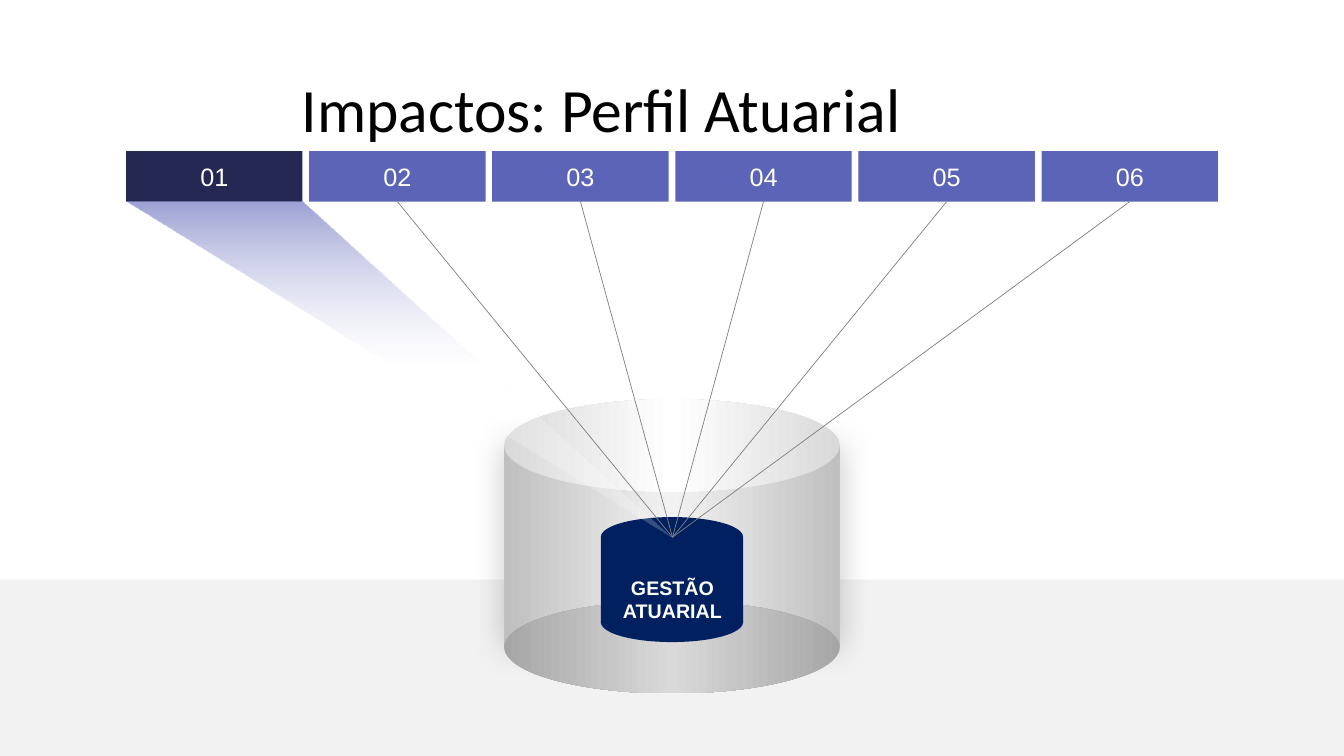
"""Build the slide on actuarial profile impacts."""
from dataclasses import dataclass
from typing import Any, Optional

from lxml.etree import SubElement
from pptx import Presentation
from pptx.dml.color import RGBColor
from pptx.enum.shapes import MSO_CONNECTOR, MSO_SHAPE
from pptx.enum.text import MSO_ANCHOR, PP_ALIGN
from pptx.oxml.ns import qn
from pptx.util import Inches, Pt

WHITE = RGBColor(0xFF, 0xFF, 0xFF)
BLACK = RGBColor(0x00, 0x00, 0x00)
PALE = RGBColor(0xF2, 0xF2, 0xF2)
LIGHT = RGBColor(0xD9, 0xD9, 0xD9)
SILVER = RGBColor(0xBF, 0xBF, 0xBF)
STONE = RGBColor(0xA6, 0xA6, 0xA6)
GREY = RGBColor(0x80, 0x80, 0x80)
NAVY = RGBColor(0x00, 0x20, 0x60)
DARK = RGBColor(0x24, 0x28, 0x52)
PURPLE = RGBColor(0x5C, 0x64, 0xB7)

WIDE, HIGH = 13.33, 7.5
LEFT, TOP = 1.25, 1.5
TILE_W, TILE_H = 1.75, 0.5
COUNT = 6
STEP = (WIDE - 2 * LEFT - TILE_W) / (COUNT - 1)
FOCUS = (6.67, 5.33)

TITLE = {"name": "Calibri", "size": Pt(44)}
NUMBER = {"name": "Arial", "size": Pt(18)}
LABEL = {"name": "Arial", "size": Pt(14), "bold": True}
BARE = {"margin_left": 0, "margin_right": 0, "margin_top": 0, "margin_bottom": 0}


@dataclass(frozen=True)
class Stop:
    place: int
    color: RGBColor
    alpha: int = 100


@dataclass(frozen=True)
class Part:
    kind: MSO_SHAPE
    left: float
    top: float
    width: float
    height: float
    color: RGBColor
    middle: Optional[RGBColor] = None


DRUM = [
    Part(MSO_SHAPE.RECTANGLE, 5, 4.42, 3.33, 2, SILVER, PALE),
    Part(MSO_SHAPE.OVAL, 5, 3.96, 3.33, 0.92, LIGHT, WHITE),
    Part(MSO_SHAPE.OVAL, 5, 5.96, 3.33, 0.92, STONE, LIGHT),
]
CORE = [
    Part(MSO_SHAPE.RECTANGLE, 5.96, 5.33, 1.41, 0.85, NAVY),
    Part(MSO_SHAPE.OVAL, 5.96, 5.13, 1.41, 0.39, NAVY),
    Part(MSO_SHAPE.OVAL, 5.96, 5.98, 1.41, 0.39, NAVY),
]


def apply(target: Any, values: dict[str, Any]) -> None:
    for key, value in values.items():
        setattr(target, key, value)


def tint(node: Any, color: RGBColor, alpha: int) -> None:
    shade = SubElement(node, qn("a:srgbClr"), val=str(color))
    if alpha < 100:
        SubElement(shade, qn("a:alpha"), val=str(alpha * 1000))


def blend(shape: Any, stops: list[Stop], angle: int) -> None:
    shape.fill.gradient()
    shape.fill.gradient_angle = angle
    ramp = shape.element.spPr.find(qn("a:gradFill")).find(qn("a:gsLst"))
    ramp.clear()
    for stop in stops:
        node = SubElement(ramp, qn("a:gs"), pos=str(stop.place * 1000))
        tint(node, stop.color, stop.alpha)


def draw(shapes: Any, part: Part) -> Any:
    box = map(Inches, (part.left, part.top, part.width, part.height))
    shape = shapes.add_shape(part.kind, *box)
    shape.shadow.inherit = False
    shape.line.fill.background()
    if part.middle is None:
        shape.fill.solid()
        shape.fill.fore_color.rgb = part.color
    else:
        ends = [Stop(0, part.color), Stop(50, part.middle), Stop(100, part.color)]
        blend(shape, ends, 0)
    return shape


def glow(shape: Any) -> None:
    effects = shape.element.spPr.find(qn("a:effectLst"))
    outer = SubElement(effects, qn("a:outerShdw"), blurRad=str(Pt(24)),
                       dist="0", dir=str(315 * 60000), rotWithShape="0")
    tint(outer, BLACK, 21)


def write(shape: Any, text: str, style: dict[str, Any], color: RGBColor) -> Any:
    line = shape.text_frame.paragraphs[0]
    line.alignment = PP_ALIGN.CENTER
    run = line.add_run()
    run.text = text
    apply(run.font, style)
    run.font.color.rgb = color
    return line


def add_text(shapes: Any, box: tuple[float, ...], text: str,
             style: dict[str, Any], color: RGBColor) -> Any:
    shape = shapes.add_textbox(*map(Inches, box))
    shape.text_frame.word_wrap = True
    write(shape, text, style, color)
    return shape


def add_beam(shapes: Any) -> None:
    base = TOP + TILE_H
    maker = shapes.build_freeform(Inches(LEFT), Inches(base))
    ends = [(LEFT + TILE_W, base), FOCUS]
    maker.add_line_segments([(Inches(x), Inches(y)) for x, y in ends], close=True)
    beam = maker.convert_to_shape()
    beam.shadow.inherit = False
    beam.line.fill.background()
    blend(beam, [Stop(0, PURPLE, 60), Stop(49, WHITE, 21)], 270)


def add_ray(shapes: Any, tile: Any) -> None:
    x, y = map(Inches, FOCUS)
    ray = shapes.add_connector(MSO_CONNECTOR.STRAIGHT, x, y, x, y)
    ray.begin_connect(tile, 2)
    ray.line.color.rgb = GREY
    ray.line.width = Pt(0.5)
    SubElement(ray.element.spPr, qn("a:effectLst"))


def main() -> None:
    deck = Presentation()
    apply(deck, {"slide_width": Inches(WIDE), "slide_height": Inches(HIGH)})
    shapes = deck.slides.add_slide(deck.slide_layouts[6]).shapes

    draw(shapes, Part(MSO_SHAPE.RECTANGLE, 0, 5.75, WIDE, 1.75, PALE))
    drum = shapes.add_group_shape().shapes
    body, *_ = [draw(drum, part) for part in DRUM]
    glow(body)
    core = shapes.add_group_shape().shapes
    for part in CORE:
        draw(core, part)

    title = add_text(shapes, (-0.61, 0.79, 13.15, 1.25),
                     "Impactos: Perfil Atuarial", TITLE, BLACK)
    apply(title.text_frame, BARE)
    title.text_frame.paragraphs[0].line_spacing = 0.9

    tiles = []
    for index in range(COUNT):
        color = PURPLE if index else DARK
        tile = draw(shapes, Part(MSO_SHAPE.RECTANGLE, LEFT + index * STEP, TOP,
                                 TILE_W, TILE_H, color))
        tile.text_frame.vertical_anchor = MSO_ANCHOR.MIDDLE
        write(tile, f"{index + 1:02}", NUMBER, WHITE)
        tiles.append(tile)

    add_beam(shapes)
    for tile in tiles[1:]:
        add_ray(shapes, tile)
    add_text(shapes, (5.82, 5.66, 1.7, 0.57), "GESTÃO ATUARIAL", LABEL, WHITE)
    deck.save("out.pptx")


if __name__ == "__main__":
    main()
